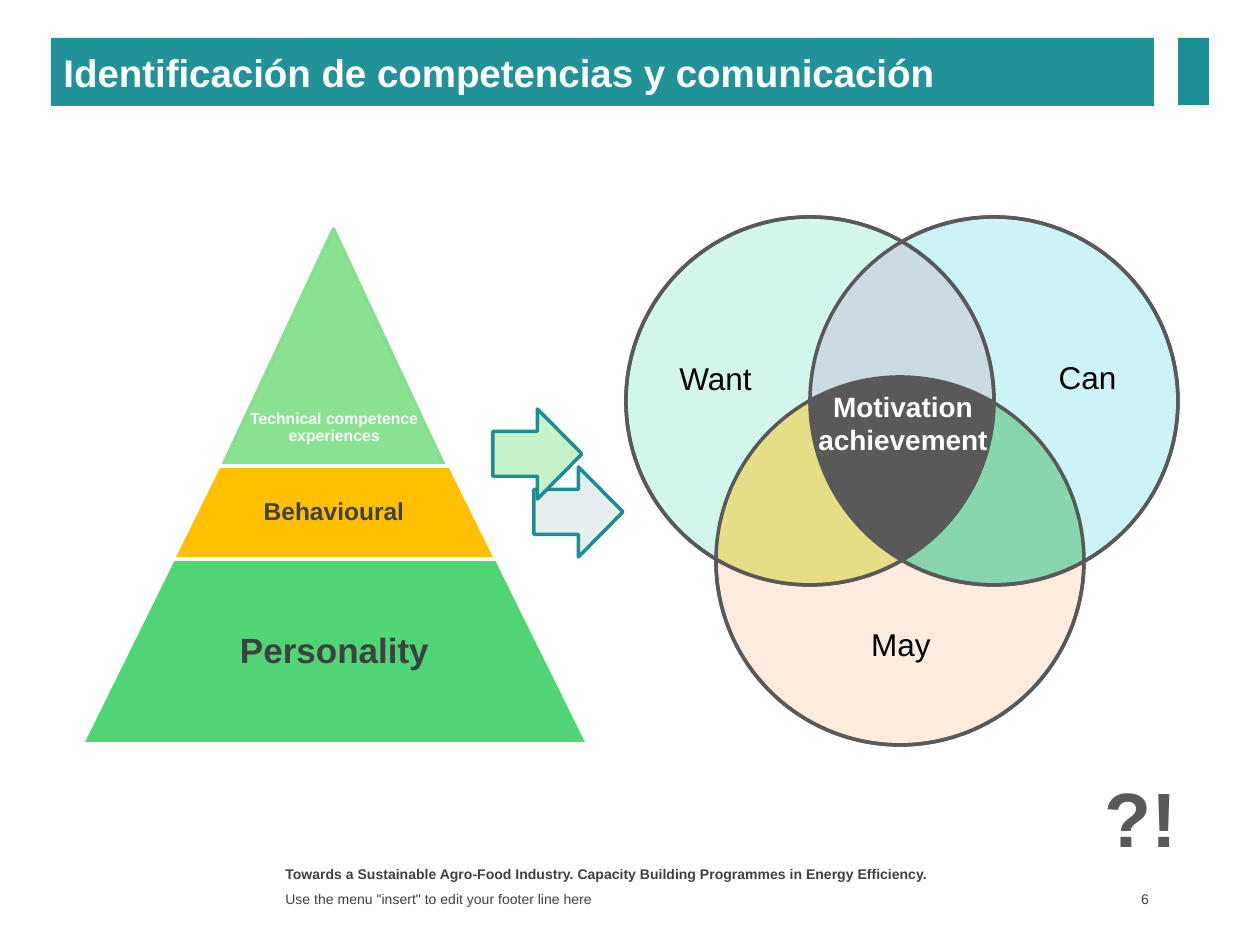
from math import cos, radians, sin

from lxml import etree
from pptx import Presentation
from pptx.dml.color import RGBColor
from pptx.enum.shapes import MSO_SHAPE
from pptx.enum.text import MSO_ANCHOR, PP_ALIGN
from pptx.oxml.ns import qn
from pptx.util import Pt

PX = 914400 / 126
TEAL = "1B8E95"
GREY = "595959"
DARK = "404040"
WHITE = "FFFFFF"
LEFT, CENTER, RIGHT = PP_ALIGN.LEFT, PP_ALIGN.CENTER, PP_ALIGN.RIGHT
TOP, MIDDLE, BOTTOM = MSO_ANCHOR.TOP, MSO_ANCHOR.MIDDLE, MSO_ANCHOR.BOTTOM


def paint(shape, fill=None, line=None, opacity=100):
    """Set fill and 2 pt outline from hex colours; None means no paint."""
    shape.shadow.inherit = False
    if fill:
        shape.fill.solid()
        shape.fill.fore_color.rgb = RGBColor.from_string(fill)
        if opacity < 100:
            color = shape.fill._xPr.find(qn("a:solidFill"))[0]
            etree.SubElement(color, qn("a:alpha"), val=str(opacity * 1000))
    else:
        shape.fill.background()
    if line:
        shape.line.color.rgb = RGBColor.from_string(line)
        shape.line.width = Pt(2)
    else:
        shape.line.fill.background()


def write(shape, text, size, color, bold=False, align=LEFT, anchor=TOP, inset=None):
    """Fill a shape with one formatted paragraph; inset is (sides, top and bottom)."""
    frame = shape.text_frame
    frame.word_wrap = True
    frame.vertical_anchor = anchor
    if inset:
        frame.margin_left = frame.margin_right = int(inset[0] * PX)
        frame.margin_top = frame.margin_bottom = int(inset[1] * PX)
    paragraph = frame.paragraphs[0]
    paragraph.text = text
    paragraph.alignment = align
    font = paragraph.runs[0].font
    font.name = "Arial"
    font.size = Pt(size)
    font.bold = bold
    font.color.rgb = RGBColor.from_string(color)
    return paragraph


presentation = Presentation()
presentation.slide_width = int(1260 * PX)
presentation.slide_height = int(945 * PX)
slide = presentation.slides.add_slide(presentation.slide_layouts[6])
shapes = slide.shapes

# Title bar and accent block
title = shapes.add_shape(MSO_SHAPE.RECTANGLE, *(int(v * PX) for v in (51, 38, 1103, 68)))
paint(title, "209298")
write(title, "Identificación de competencias y comunicación", 22, WHITE, True, anchor=MIDDLE)
accent = shapes.add_shape(MSO_SHAPE.RECTANGLE, *(int(v * PX) for v in (1178, 38, 31, 67)))
paint(accent, TEAL)

# Competence pyramid: box, slope, fill, line, text box, text, size, colour, anchor
levels = [
    ((219, 229, 229, 245), 0.527, "88E28F", "87DE8D", (219, 329, 230, 119),
     "Technical competence experiences", 9, WHITE, BOTTOM),
    ((173, 466, 323, 93), 0.494, "FFC000", WHITE, (229, 466, 210, 93),
     "Behavioural", 14, DARK, MIDDLE),
    ((82, 559, 506, 185), 0.494, "4FD576", WHITE, (170, 560, 329, 185),
     "Personality", 20, DARK, MIDDLE),
]
for box, slope, fill, line, text_box, text, size, color, anchor in levels:
    level = shapes.add_shape(MSO_SHAPE.TRAPEZOID, *(int(v * PX) for v in box))
    level.adjustments[0] = slope
    paint(level, fill, line)
    label = shapes.add_textbox(*(int(v * PX) for v in text_box))
    paragraph = write(label, text, size, color, True, CENTER, anchor, (3, 3))
    paragraph.line_spacing = 0.9

# Arrows from the pyramid to the circles
for left, top, fill in [(534, 467, "E7EEEF"), (493, 409, "C6F2C9")]:
    arrow = shapes.add_shape(
        MSO_SHAPE.RIGHT_ARROW, *(int(v * PX) for v in (left, top, 89, 90)))
    paint(arrow, fill, TEAL)

# Three overlapping circles: centre and fill
RADIUS = 184
circles = {
    "may": (900, 561, "FDEADA"),
    "can": (994, 401, "C6F2F5"),
    "want": (810, 401, "CEF6EA"),
}
circle_boxes = {
    name: [int(v * PX) for v in (x - RADIUS, y - RADIUS, 2 * RADIUS, 2 * RADIUS)]
    for name, (x, y, fill) in circles.items()
}
for name, (x, y, fill) in circles.items():
    paint(shapes.add_shape(MSO_SHAPE.OVAL, *circle_boxes[name]), fill, GREY, 89)

# Circle labels
for box, text in [
    ((751, 619, 300, 50), "May"),
    ((997, 352, 181, 50), "Can"),
    ((625, 353, 181, 50), "Want"),
]:
    label = shapes.add_textbox(*(int(v * PX) for v in box))
    write(label, text, 18, "000000", align=CENTER)

# Overlaps, each bounded by three 60 degree arcs: circle, start and end angle
overlaps = [
    ("FFC000", 42, [("want", 60, 120), ("may", 180, 240), ("can", 180, 120)]),
    ("2AB151", 42, [("can", 120, 60), ("may", 0, -60), ("want", 0, 60)]),
    ("C9B8DB", 42, [("want", -60, 0), ("may", -60, -120), ("can", 180, 240)]),
    (GREY, 100, [("want", 0, 60), ("can", 120, 180), ("may", -120, -60)]),
]
STEPS = 4
for fill, opacity, arcs in overlaps:
    points = []
    for name, start, end in arcs:
        x, y, _ = circles[name]
        for step in range(STEPS):
            angle = radians(start + (end - start) * step / STEPS)
            points.append(((x + RADIUS * cos(angle)) * PX, (y + RADIUS * sin(angle)) * PX))
    builder = shapes.build_freeform(*points[0], scale=1.0)
    builder.add_line_segments(points[1:], close=True)
    paint(builder.convert_to_shape(), fill, opacity=opacity)

for box in circle_boxes.values():
    paint(shapes.add_shape(MSO_SHAPE.OVAL, *box), line=GREY)

# Core label, closing mark and footer
texts = [
    ((790, 383, 226, 69), "Motivation achievement", 16, WHITE, True, CENTER, TOP),
    ((1092, 764, 123, 89), "?!", 44, GREY, True, LEFT, TOP),
    ((273, 859, 693, 26),
     "Towards a Sustainable Agro-Food Industry. Capacity Building Programmes in Energy Efficiency.",
     8, DARK, True, LEFT, TOP),
    ((273, 887, 693, 24), 'Use the menu "insert" to edit your footer line here',
     8, DARK, False, LEFT, MIDDLE),
]
for box, *content in texts:
    write(shapes.add_textbox(*(int(v * PX) for v in box)), *content)

page_number = shapes.add_textbox(*(int(v * PX) for v in (1084, 886, 70, 25)))
write(page_number, "6", 8, DARK, False, RIGHT, MIDDLE, (5, 6))

presentation.save("out.pptx")
